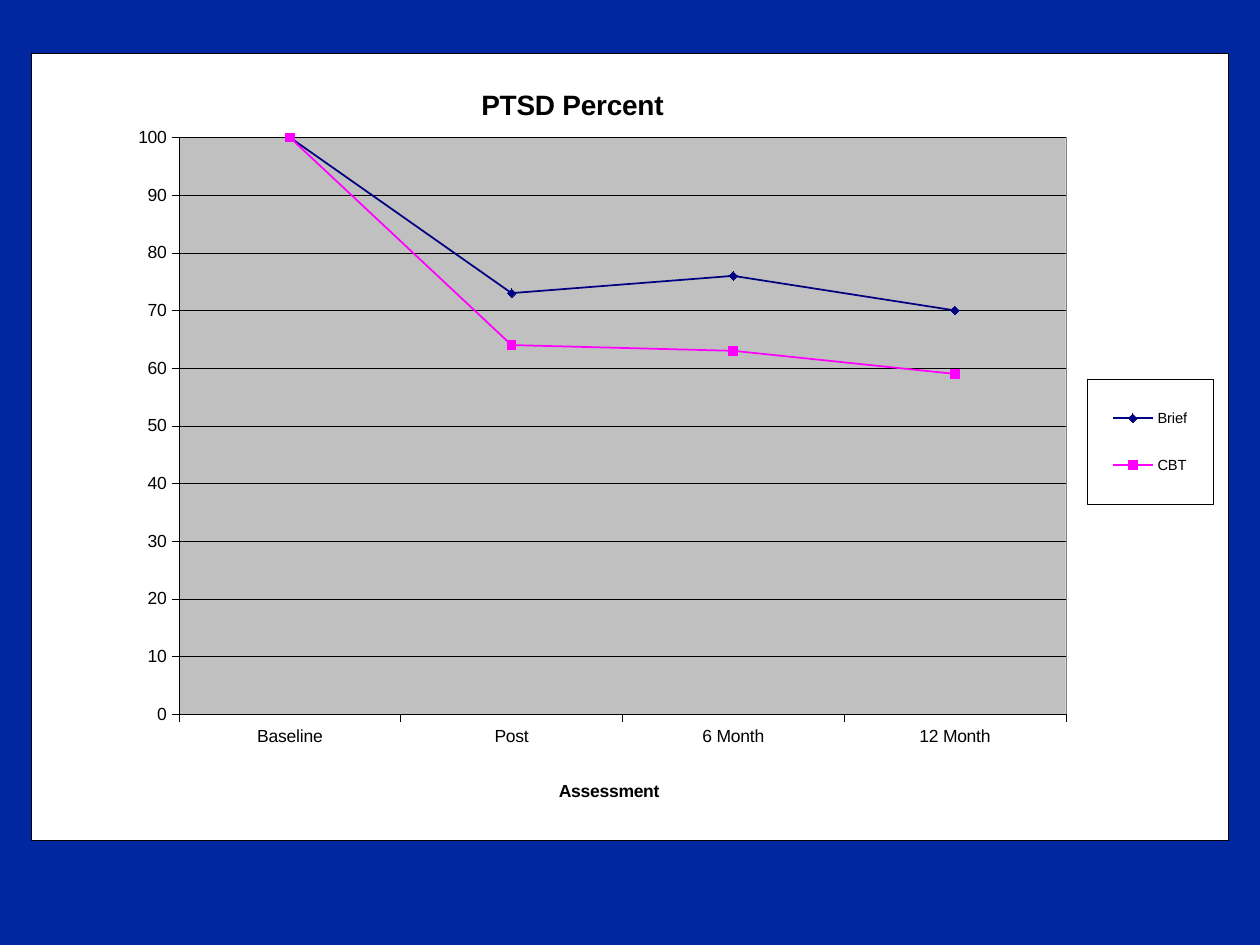
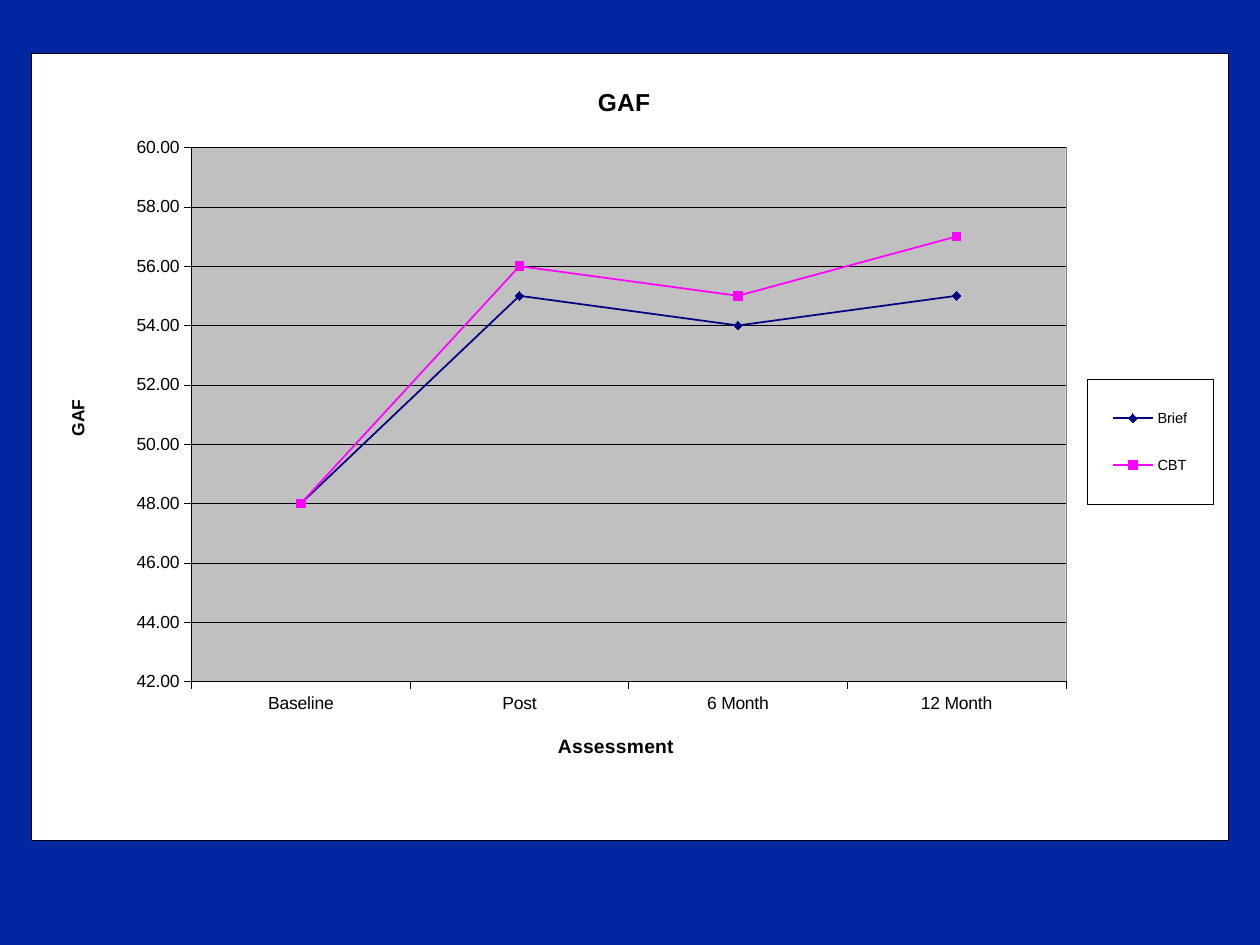
from itertools import cycle

from lxml import etree
from pptx import Presentation
from pptx.chart import data as chart_data
from pptx.dml import color
from pptx.enum import chart as ch
from pptx.oxml import ns
from pptx.util import Inches, Pt

COLORS = {
    "background": "00279F",
    "panel": "FFFFFF",
    "plot": "C0C0C0",
    "plot_edge": "808080",
    "ink": "000000",
    "Brief": "000080",
    "CBT": "FF00FF",
}
MARKERS = {
    "Brief": ch.XL_MARKER_STYLE.DIAMOND,
    "CBT": ch.XL_MARKER_STYLE.SQUARE,
}
ASSESSMENTS = ["Baseline", "Post", "6 Month", "12 Month"]
HAIRLINE = Pt(0.25)
PANEL_SIZE = (Inches(9.5), Inches(6.25))


def rgb(name):
    return color.RGBColor.from_string(COLORS[name])


def chart_part(tag, parent, **attributes):
    return etree.SubElement(parent, ns.qn(tag), attributes)


def place(element, box, after=None, inner=False):
    for previous in element.findall(ns.qn("c:layout")):
        element.remove(previous)
    layout = etree.Element(ns.qn("c:layout"))
    manual = chart_part("c:manualLayout", layout)
    if inner:
        chart_part("c:layoutTarget", manual, val="inner")
    for mode in ("xMode", "yMode"):
        chart_part(f"c:{mode}", manual, val="edge")
    for side, length, whole in zip("xywh", box, cycle(PANEL_SIZE)):
        chart_part(f"c:{side}", manual, val=f"{Inches(length) / whole:.5f}")
    if after:
        element.find(ns.qn(after)).addnext(layout)
    else:
        element.insert(0, layout)


def paint(element, fill, edge):
    look = etree.Element(ns.qn("c:spPr"))
    chart_part("a:srgbClr", chart_part("a:solidFill", look), val=COLORS[fill])
    outline = chart_part("a:ln", look, w=str(int(HAIRLINE)))
    chart_part("a:srgbClr", chart_part("a:solidFill", outline), val=COLORS[edge])
    text_style = element.find(ns.qn("c:txPr"))
    if text_style is None:
        element.append(look)
    else:
        text_style.addprevious(look)


class OutcomeDeck:
    def __init__(self):
        self.deck = Presentation()
        self.deck.slide_width = Inches(10)
        self.deck.slide_height = Inches(7.5)
        self.slide = None

    def add_slide(self):
        self.slide = self.deck.slides.add_slide(self.deck.slide_layouts[6])
        fill = self.slide.background.fill
        fill.solid()
        fill.fore_color.rgb = rgb("background")

    def font(self, font, size, bold=False):
        font.name = "Arial"
        font.size = Pt(size)
        font.bold = bold
        font.color.rgb = rgb("ink")

    def line(self, line, name="ink", width=HAIRLINE):
        line.color.rgb = rgb(name)
        line.width = width

    def caption(self, title, words, size, position):
        title.text_frame.text = words
        self.font(title.text_frame.paragraphs[0].font, size, bold=True)
        place(title.element, position, after="c:tx")

    def axis(self, axis):
        axis.major_tick_mark = ch.XL_TICK_MARK.OUTSIDE
        axis.minor_tick_mark = ch.XL_TICK_MARK.NONE
        self.font(axis.tick_labels.font, 10)
        self.line(axis.format.line)

    def scale(self, axis, low, high, step, number_format):
        self.axis(axis)
        axis.minimum_scale, axis.maximum_scale, axis.major_unit = low, high, step
        axis.has_major_gridlines = True
        self.line(axis.major_gridlines.format.line)
        axis.tick_labels.number_format = number_format
        axis.tick_labels.number_format_is_linked = False

    def legend(self, chart):
        chart.has_legend = True
        chart.legend.position = ch.XL_LEGEND_POSITION.RIGHT
        chart.legend.include_in_layout = False
        self.font(chart.legend.font, 8.4)
        legend = chart.element.xpath(".//c:legend")[0]
        place(legend, (8.38, 2.59, 1, 0.99), after="c:legendPos")
        paint(legend, "panel", "ink")

    def series(self, series):
        series.smooth = False
        self.line(series.format.line, series.name, Pt(1))
        marker = series.marker
        marker.style = MARKERS[series.name]
        marker.size = 5
        marker.format.fill.solid()
        marker.format.fill.fore_color.rgb = rgb(series.name)
        self.line(marker.format.line, series.name)

    def line_chart(self, outcomes, plot_box, scale):
        data = chart_data.CategoryChartData()
        data.categories = ASSESSMENTS
        for therapy, values in outcomes.items():
            data.add_series(therapy, values)
        chart = self.slide.shapes.add_chart(
            ch.XL_CHART_TYPE.LINE_MARKERS,
            Inches(0.25), Inches(0.42), *PANEL_SIZE, data,
        ).chart
        self.font(chart.font, 10)
        chart.plots[0].vary_by_categories = False
        for series in chart.plots[0].series:
            self.series(series)
        self.axis(chart.category_axis)
        self.scale(chart.value_axis, *scale)
        self.legend(chart)
        plot_area = chart.element.xpath(".//c:plotArea")[0]
        place(plot_area, plot_box, inner=True)
        paint(plot_area, "plot", "plot_edge")
        paint(chart.element, "panel", "ink")
        return chart


def ptsd_slide(deck):
    deck.add_slide()
    chart = deck.line_chart(
        {"Brief": [100, 73, 76, 70], "CBT": [100, 64, 63, 59]},
        (1.17, 0.67, 7.04, 4.58),
        (0, 100, 10, "General"),
    )
    deck.caption(chart.chart_title, "PTSD Percent", 16, (3.53, 0.23))
    deck.caption(chart.category_axis.axis_title, "Assessment", 10, (4.16, 5.74))


def gaf_slide(deck):
    deck.add_slide()
    chart = deck.line_chart(
        {"Brief": [48, 55, 54, 55], "CBT": [48, 56, 55, 57]},
        (1.27, 0.75, 6.94, 4.24),
        (42, 60, 2, "#,##0.00"),
    )
    deck.caption(chart.chart_title, "GAF", 14, (4.46, 0.23))
    deck.caption(chart.category_axis.axis_title, "Assessment", 11, (4.15, 5.37))
    scale_title = chart.value_axis.axis_title
    deck.caption(scale_title, "GAF", 10, (0.25, 2.73))
    body = scale_title.element.xpath(".//a:bodyPr")[0]
    body.set("rot", "-5400000")
    body.set("vert", "horz")


def main():
    deck = OutcomeDeck()
    ptsd_slide(deck)
    gaf_slide(deck)
    deck.deck.save("out.pptx")


if __name__ == "__main__":
    main()
